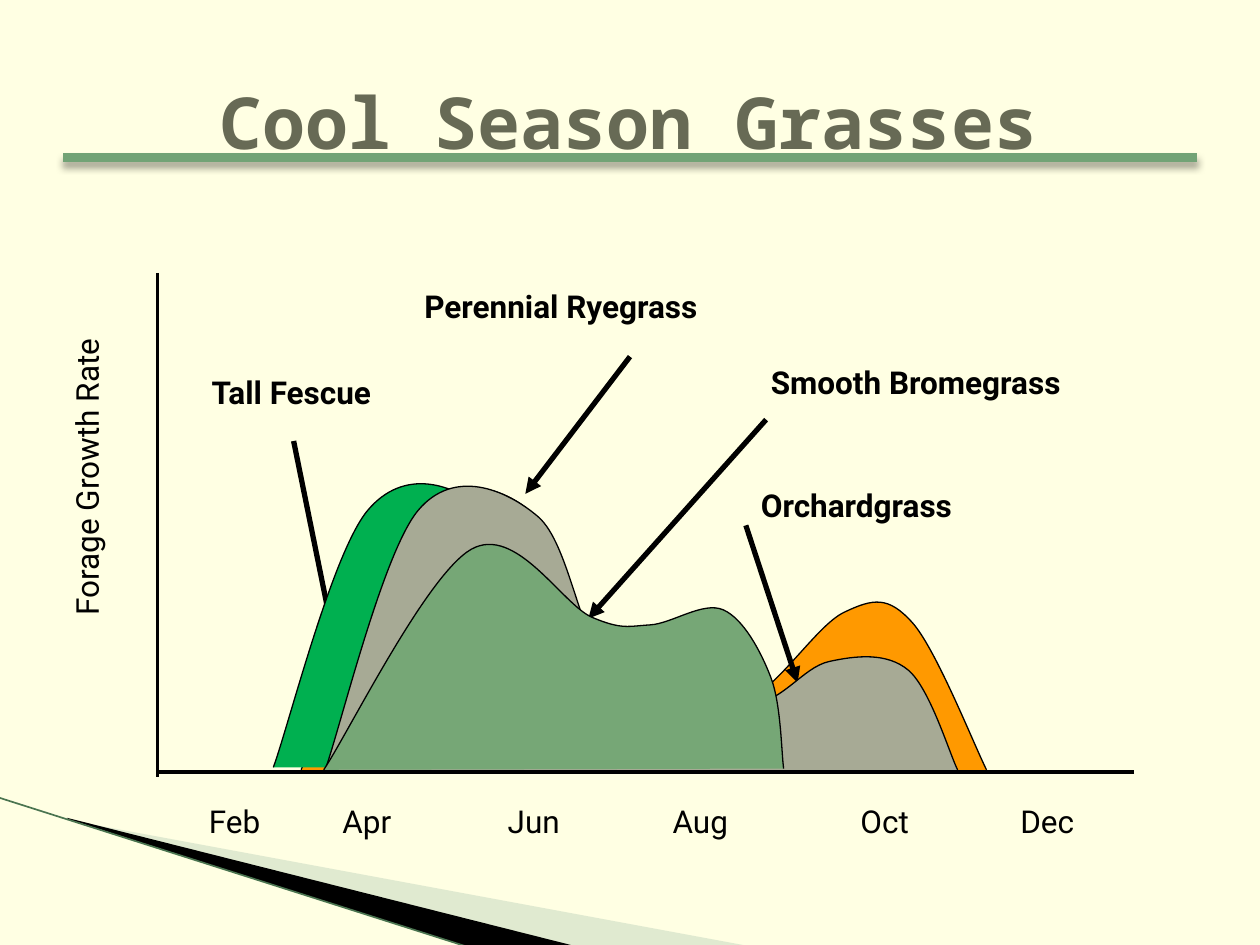
from lxml import etree
from pptx import Presentation
from pptx.dml.color import RGBColor
from pptx.enum.shapes import MSO_CONNECTOR
from pptx.enum.text import MSO_ANCHOR, PP_ALIGN
from pptx.oxml.ns import qn
from pptx.util import Pt

STRAIGHT = MSO_CONNECTOR.STRAIGHT
CENTER, LEFT = PP_ALIGN.CENTER, PP_ALIGN.LEFT
MIDDLE, TOP = MSO_ANCHOR.MIDDLE, MSO_ANCHOR.TOP
TITLE_ONLY = 5
BLACK = "000000"
UNITS = 100  # outline units in a point

# Knots of each season curve, in points from the top left of the chart
ORCHARDGRASS = [(82.1, 283.9), (144, 140.6), (212.4, 135.6), (259.2, 235.7),
                (330.5, 247.9), (392.4, 193.9), (431.3, 199.7), (473.8, 283.9)]
TALL_FESCUE = [(66.2, 282.5), (120.2, 135.6), (188.6, 137), (239.8, 240.7),
               (335.5, 254.4), (387.4, 225.6), (424.8, 237.1), (452.2, 283.2)]
RYEGRASS = [(95.8, 283.9), (149, 135.6), (217.4, 139.2), (261.4, 231.4),
            (337, 247.2), (383.8, 222), (429.1, 227), (457.2, 283.9)]
BROMEGRASS = [(95, 283.9), (179.3, 157.9), (248.4, 196.8), (281.5, 201.1),
              (323.3, 192.5), (350.6, 231.4), (357.8, 283.2)]

# Text, left, width
MONTHS = [("Feb", 22.3, 52.6), ("Apr", 98.6, 50.4), ("Jun", 193, 51.1),
          ("Aug", 287.3, 55.4), ("Oct", 394.6, 50.4), ("Dec", 486, 54.7)]
# Text, left, top, width, arrow start, arrow end
GRASSES = [
    ("Tall Fescue", 23.8, 53.5, 148.3, (77.8, 96), (102.2, 216.2)),
    ("Orchardgrass", 337.7, 118.3, 175.7, (336.2, 144.2), (365.8, 234.2)),
    ("Perennial Ryegrass", 145.4, 4.6, 245.5, (270, 47.8), (210.2, 126.2)),
    ("Smooth Bromegrass", 343.4, 47.8, 198.7, (347.8, 83.8), (246.2, 197.5)),
]


def color(value):
    return RGBColor.from_string(value)


def add_line(slide, start, end, line_color, width, arrow=False):
    """Draw a straight line and return its effect list."""
    line = slide.shapes.add_connector(STRAIGHT, *(Pt(v) for v in start + end))
    line.line.color.rgb = color(line_color)
    line.line.width = Pt(width)
    if arrow:
        etree.SubElement(line.line._get_or_add_ln(), qn("a:tailEnd"), type="triangle")
    return etree.SubElement(line._element.spPr, qn("a:effectLst"))


def add_outline(slide, left, top, points, fill, close=True):
    points = [((left + x) * UNITS, (top + y) * UNITS) for x, y in points]
    builder = slide.shapes.build_freeform(*points[0], scale=Pt(1) / UNITS)
    builder.add_line_segments(points[1:], close=close)
    shape = builder.convert_to_shape()
    shape.shadow.inherit = False
    shape.fill.solid()
    shape.fill.fore_color.rgb = color(fill)
    shape.line.fill.background()
    return shape


def set_frame(shape, left, top, width, height):
    """Give a freeform a frame of its own and leave its outline in place."""
    outline = shape._element.spPr.find(".//" + qn("a:path"))
    shift_x = round((shape.left - Pt(left)) / Pt(1) * UNITS)
    shift_y = round((shape.top - Pt(top)) / Pt(1) * UNITS)
    for point in outline.iter(qn("a:pt")):
        point.set("x", str(int(point.get("x")) + shift_x))
        point.set("y", str(int(point.get("y")) + shift_y))
    outline.set("w", str(round(width * UNITS)))
    outline.set("h", str(round(height * UNITS)))
    shape.left, shape.top, shape.width, shape.height = map(Pt, (left, top, width, height))


def add_curve(slide, left, top, knots, fill):
    """Draw a smooth curve through the knots, as Bezier segments."""
    padded = [knots[0], *knots, knots[-1]]
    points = [knots[0]]
    for before, start, end, after in zip(padded, padded[1:], padded[2:], padded[3:]):
        points.append(tuple(b + (c - a) / 6 for a, b, c in zip(before, start, end)))
        points.append(tuple(c - (d - b) / 6 for b, c, d in zip(start, end, after)))
        points.append(end)
    shape = add_outline(slide, left, top, points, fill, close=False)
    shape.line.color.rgb = color(BLACK)
    shape.line.width = Pt(0.75)

    # Every three points become one cubic segment
    outline = shape._element.spPr.find(".//" + qn("a:path"))
    segments = outline.findall(qn("a:lnTo"))
    for first in range(0, len(segments), 3):
        curve = etree.SubElement(outline, qn("a:cubicBezTo"))
        for segment in segments[first:first + 3]:
            curve.append(segment[0])
            outline.remove(segment)


def format_text(text_frame, font_name, size, font_color, bold, alignment, anchor):
    text_frame.word_wrap = True
    text_frame.vertical_anchor = anchor
    paragraph = text_frame.paragraphs[0]
    paragraph.alignment = alignment
    font = paragraph.runs[0].font
    font.name, font.size, font.bold = font_name, Pt(size), bold
    font.color.rgb = color(font_color)


def add_label(slide, text, left, top, width, bold=False):
    label = slide.shapes.add_textbox(Pt(left), Pt(top), Pt(width), Pt(36))
    label.text_frame.text = text
    format_text(label.text_frame, "Roboto", 18, BLACK, bold, LEFT, TOP)
    return label


def add_corner(slide, left, top):
    """Wedges in the bottom left corner."""
    pale = add_outline(slide, left, top,
                       [(39.6, 12.7), (428.4, 84.7), (328.3, 84.7), (39.6, 12)], "B3CBB5")
    set_frame(pale, left + 56.2, top - 62.2, 299.5, 113.8)
    fill_color = pale._element.spPr.find(qn("a:solidFill"))[0]
    etree.SubElement(fill_color, qn("a:alpha"), val="40000")
    dark = add_outline(slide, left, top,
                       [(38.2, 11.3), (329, 84.7), (267.8, 85.4), (38.9, 12)], BLACK)
    set_frame(dark, left - 4.3, top, 299.5, 66.2)
    add_line(slide, (left, top), (left + 267, top + 85), "4A7450", 0.95)


def add_title(slide, left, top, width, height):
    # Rule with a soft shadow
    effects = add_line(slide, (36, 90), (684, 90), "72A376", 5)
    shadow = etree.SubElement(effects, qn("a:outerShdw"), blurRad=str(Pt(4)),
                              dist=str(Pt(3)), dir="5400000", rotWithShape="0")
    shadow_color = etree.SubElement(shadow, qn("a:srgbClr"), val=BLACK)
    etree.SubElement(shadow_color, qn("a:alpha"), val="35000")

    # Title in front of the rule
    title = slide.shapes.title
    title.left, title.top, title.width, title.height = map(Pt, (left, top, width, height))
    title.text_frame.text = "Cool Season Grasses"
    format_text(title.text_frame, "Noto Sans Mono", 41, "676A55", True, CENTER, MIDDLE)
    slide.shapes._spTree.append(title._element)


def add_growth_chart(slide, left, top, width, height):
    def place(point):
        return left + point[0], top + point[1]

    # Axis labels
    for month, x, label_width in MONTHS:
        add_label(slide, month, left + x, top + height + 11, label_width)
    axis_label = add_label(slide, "Forage Growth Rate", left - 150.5, top + 71.5, 226.8)
    axis_label.rotation = 270

    # The rearmost curve, then the grass names with their arrows
    add_curve(slide, left, top, ORCHARDGRASS, "FF9900")
    for name, x, y, label_width, start, end in GRASSES:
        add_label(slide, name, left + x, top + y, label_width, bold=True)
        add_line(slide, place(start), place(end), BLACK, 3, arrow=True)

    # Axes
    base = height - 2.6
    add_line(slide, place((0, 0)), place((0, height)), BLACK, 2.25)
    add_line(slide, place((width, base)), place((0, base)), BLACK, 2.25)

    # Front curves
    for knots, fill in ((TALL_FESCUE, "00B050"), (RYEGRASS, "A7AA95"), (BROMEGRASS, "76A776")):
        add_curve(slide, left, top, knots, fill)


def main():
    presentation = Presentation()
    presentation.slide_width, presentation.slide_height = Pt(720), Pt(540)
    slide = presentation.slides.add_slide(presentation.slide_layouts[TITLE_ONLY])
    slide.background.fill.solid()
    slide.background.fill.fore_color.rgb = color("FFFFE3")
    add_corner(slide, 0, 456)
    add_title(slide, 53.3, 23.8, 612, 90)
    add_growth_chart(slide, 90, 156, 558, 288)
    presentation.save("out.pptx")


if __name__ == "__main__":
    main()
